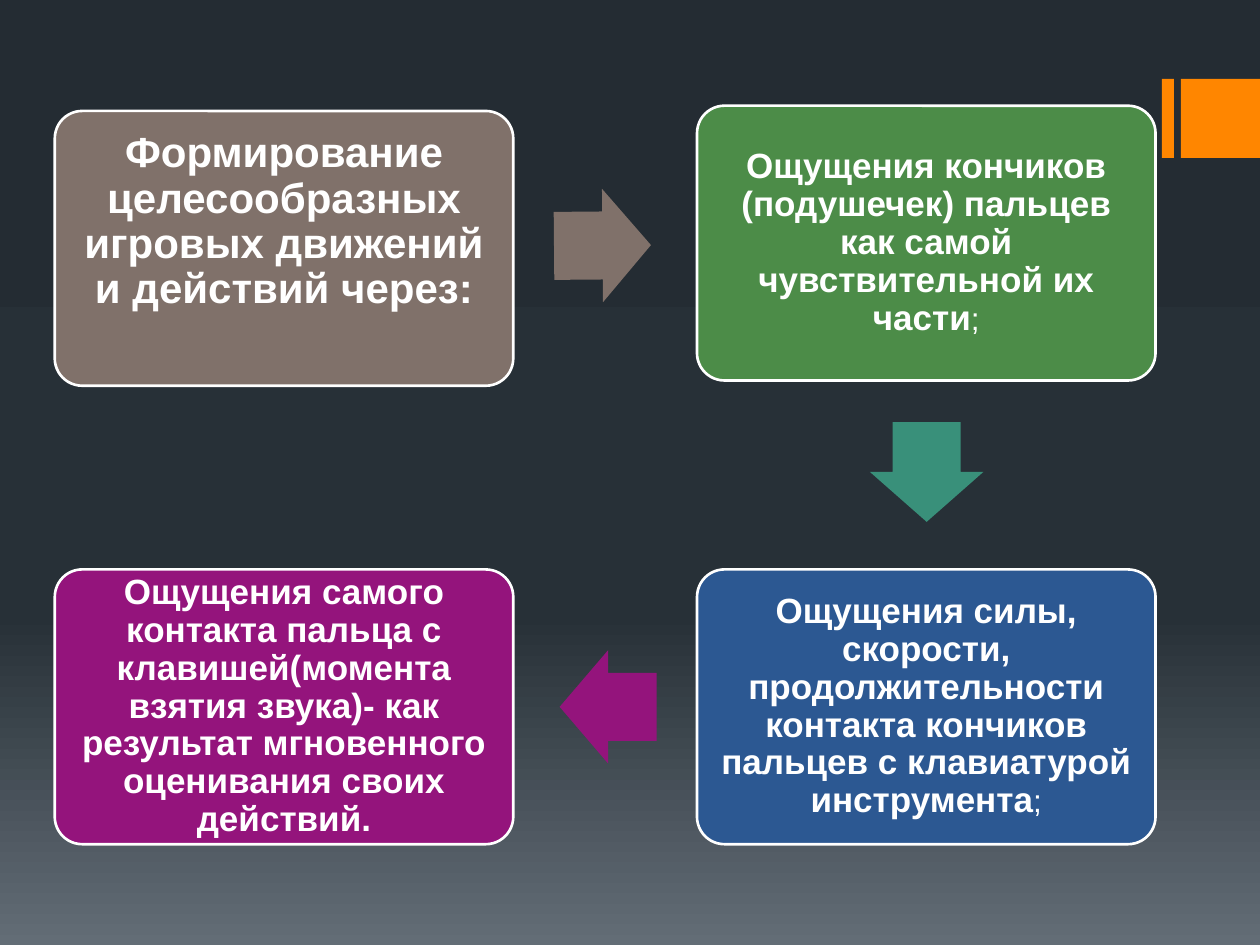
from copy import deepcopy
from dataclasses import dataclass

from pptx import Presentation
from pptx.dml.color import RGBColor
from pptx.enum.shapes import MSO_SHAPE as Preset
from pptx.enum.text import MSO_ANCHOR as Anchor, PP_ALIGN as Align
from pptx.oxml.ns import qn
from pptx.util import Pt

WHITE, ORANGE = "FFFFFF", "FF8600"
TAUPE, GREEN, TEAL, BLUE, PURPLE = "80716A", "4C8C48", "39907A", "2C5892", "94147C"
BACKDROP = [("242C33", 0), ("273037", 0.65), ("636D76", 1)]

CARD_WIDTH, CARD_HEIGHT = 262, 157
LEFT_COLUMN, RIGHT_COLUMN = 31.3, 398.3
LOWER_ROW = 325.4
ARROW_HEIGHT = 64.8


@dataclass
class Card:
    left: float
    top: float
    color: str
    wording: str
    ending: str = ""
    size: float = 20
    inset: float = 6
    anchor: Anchor = Anchor.MIDDLE


@dataclass
class Arrow:
    left: float
    top: float
    width: float
    rotation: float
    color: str


CARDS = [
    Card(LEFT_COLUMN, 63.4, TAUPE,
         "Формирование целесообразных игровых движений и действий через:",
         size=24, inset=7.2, anchor=Anchor.TOP),
    Card(RIGHT_COLUMN, 60.4, GREEN,
         "Ощущения кончиков (подушечек) пальцев как самой чувствительной их части", ";"),
    Card(RIGHT_COLUMN, LOWER_ROW, BLUE,
         "Ощущения силы, скорости, продолжительности контакта кончиков пальцев "
         "с клавиатурой инструмента", ";"),
    Card(LEFT_COLUMN, LOWER_ROW, PURPLE,
         "Ощущения самого контакта пальца с клавишей(момента взятия звука)- "
         "как результат мгновенного оценивания своих действий."),
]
ARROWS = [
    Arrow(316.6, 107.9, 55.4, 359.5, TAUPE),
    Arrow(501, 237.3, 57, 90, TEAL),
    Arrow(319.8, 371.5, 55.4, 180, PURPLE),
]


def rgb(color: str) -> RGBColor:
    return RGBColor.from_string(color)


def add_block(slide, preset: Preset, left: float, top: float,
              width: float, height: float, color: str):
    block = slide.shapes.add_shape(preset, Pt(left), Pt(top), Pt(width), Pt(height))
    block.shadow.inherit = False
    block.fill.solid()
    block.fill.fore_color.rgb = rgb(color)
    block.line.fill.background()
    return block


def draw_card(slide, card: Card) -> None:
    block = add_block(slide, Preset.ROUNDED_RECTANGLE, card.left, card.top,
                      CARD_WIDTH, CARD_HEIGHT, card.color)
    block.adjustments[0] = 0.1
    block.line.color.rgb = rgb(WHITE)
    block.line.width = Pt(1.5)

    frame = block.text_frame
    frame.word_wrap = True
    frame.vertical_anchor = card.anchor
    frame.margin_left = frame.margin_right = Pt(card.inset)
    frame.margin_top = frame.margin_bottom = Pt(card.inset)

    paragraph = frame.paragraphs[0]
    paragraph.alignment = Align.CENTER
    paragraph.line_spacing = 0.9
    paragraph.font.name = "Arial"
    paragraph.font.color.rgb = rgb(WHITE)
    paragraph.font.size = Pt(card.size)
    paragraph.font.bold = True
    paragraph.add_run().text = card.wording
    if card.ending:
        ending = paragraph.add_run()
        ending.text = card.ending
        ending.font.size = Pt(18)
        ending.font.bold = False


def draw_arrow(slide, arrow: Arrow) -> None:
    block = add_block(slide, Preset.RIGHT_ARROW, arrow.left, arrow.top,
                      arrow.width, ARROW_HEIGHT, arrow.color)
    block.adjustments[0] = 0.6
    block.adjustments[1] = 0.5
    block.rotation = arrow.rotation


def paint_backdrop(slide) -> None:
    fill = slide.background.fill
    fill.gradient()
    fill.gradient_angle = 270
    # The default gradient has two stops; a third is needed
    stop_list = slide.element.find(".//" + qn("a:gsLst"))
    stop_list.append(deepcopy(stop_list[-1]))
    for stop, (color, position) in zip(fill.gradient_stops, BACKDROP):
        stop.color.rgb = rgb(color)
        stop.position = position


def main() -> None:
    deck = Presentation()
    deck.slide_width, deck.slide_height = Pt(720), Pt(540)
    slide = deck.slides.add_slide(deck.slide_layouts[6])
    paint_backdrop(slide)

    # Orange accent at the right edge
    for left, width in ((664, 6.8), (674.8, 45.2)):
        add_block(slide, Preset.RECTANGLE, left, 45.1, width, 45.2, ORANGE)

    # Cycle of cards joined by arrows
    for card in CARDS:
        draw_card(slide, card)
    for arrow in ARROWS:
        draw_arrow(slide, arrow)

    deck.save("out.pptx")


if __name__ == "__main__":
    main()
